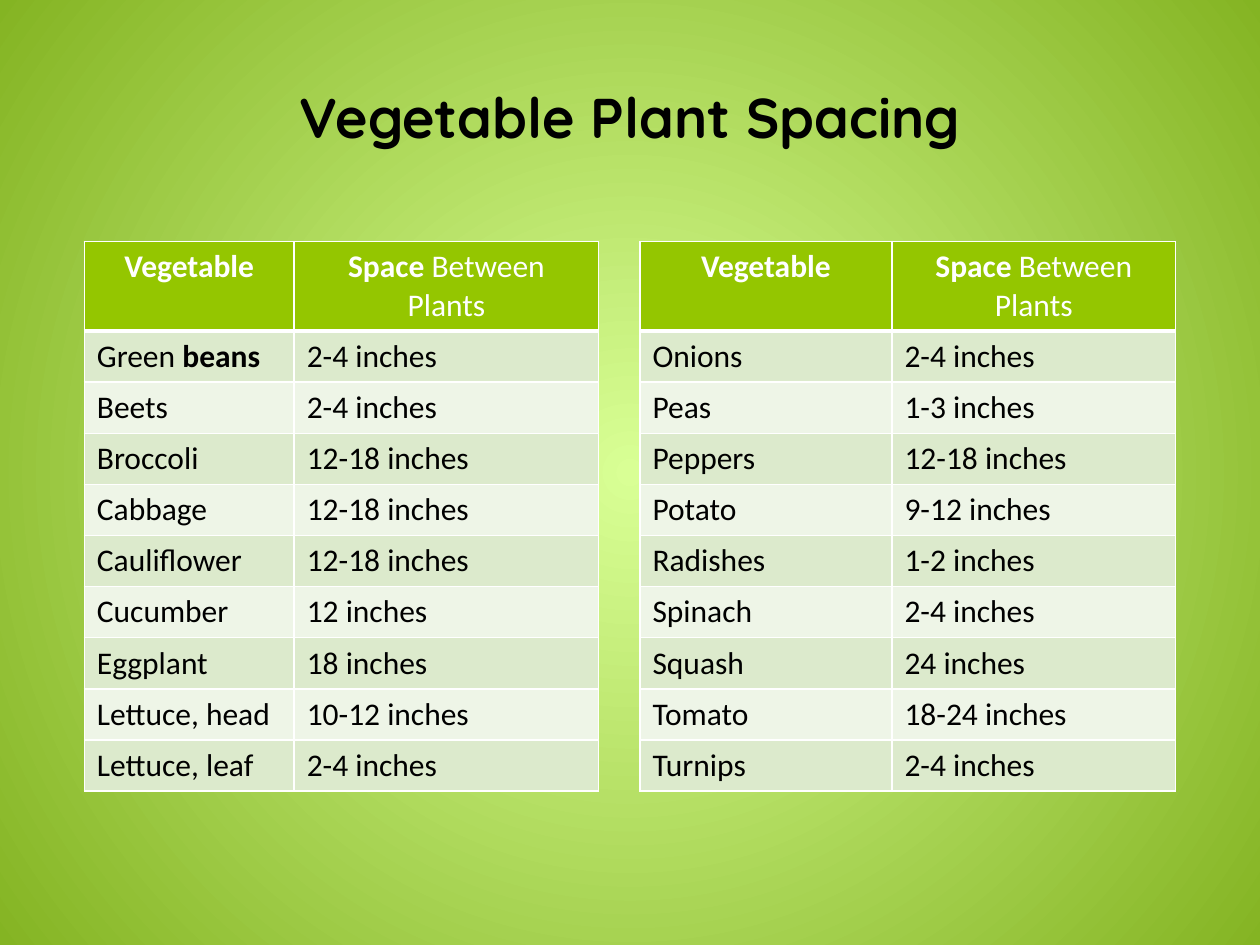
from dataclasses import dataclass

from lxml import etree
from pptx import Presentation, util as u
from pptx.dml.color import RGBColor
from pptx.enum import text
from pptx.oxml.ns import qn


@dataclass(frozen=True)
class Theme:
    head_font: str = "Quicksand"
    body_font: str = "Calibri"
    head_size: int = 32
    body_size: int = 18
    ink: str = "000000"
    white: str = "FFFFFF"
    head: str = "94C600"
    bands: tuple = ("DCEACC", "EEF5E7")
    glow: tuple = ("D9FF95", "84B423")
    thin: int = 1
    thick: int = 3


HEADER = ([("Vegetable", True)], [("Space ", True), ("Between Plants", False)])
LEFT = [
    ([("Green ", False), ("beans", True)], "2-4"),
    ("Beets", "2-4"),
    ("Broccoli", "12-18"),
    ("Cabbage", "12-18"),
    ("Cauliflower", "12-18"),
    ("Cucumber", "12"),
    ("Eggplant", "18"),
    ("Lettuce, head", "10-12"),
    ("Lettuce, leaf", "2-4"),
]
RIGHT = [
    ("Onions", "2-4"),
    ("Peas", "1-3"),
    ("Peppers", "12-18"),
    ("Potato", "9-12"),
    ("Radishes", "1-2"),
    ("Spinach", "2-4"),
    ("Squash", "24"),
    ("Tomato", "18-24"),
    ("Turnips", "2-4"),
]
TOP, HEAD_H, ROW_H = 4.87, 1.78, 1.03


class Deck:
    def __init__(self, theme):
        self.theme = theme
        self.prs = Presentation()
        self.prs.slide_width, self.prs.slide_height = u.Cm(25.4), u.Cm(19.05)
        self.slide = self.prs.slides.add_slide(self.prs.slide_layouts[5])

    def glow(self):
        """Fill the background with a gradient that spreads from the centre."""
        fill = self.slide.background.fill
        fill.gradient()
        for stop, pos, color in zip(fill.gradient_stops, (0, 1), self.theme.glow):
            stop.position = pos
            stop.color.rgb = RGBColor.from_string(color)
        grad = self.slide.element.find(".//" + qn("a:gradFill"))
        grad.remove(grad.find(qn("a:lin")))
        ring = etree.SubElement(grad, qn("a:path"), path="circle")
        etree.SubElement(ring, qn("a:fillToRect"),
                         {side: "50000" for side in "ltrb"})

    def add_runs(self, para, runs, font, size, color):
        for words, bold in runs:
            run = para.add_run()
            run.text = words
            run.font.name, run.font.size = font, u.Pt(size)
            run.font.bold = bold
            run.font.color.rgb = RGBColor.from_string(color)

    def title(self, words):
        t, box = self.theme, self.slide.shapes.title
        box.left, box.top, box.width, box.height = map(
            u.Cm, (1.27, 0.76, 22.86, 3.18))
        frame = box.text_frame
        frame.vertical_anchor = text.MSO_ANCHOR.MIDDLE
        para = frame.paragraphs[0]
        para.alignment = text.PP_ALIGN.CENTER
        self.add_runs(para, [(words, True)], t.head_font, t.head_size, t.ink)

    def edge(self, cell, row):
        """Draw white cell borders, thick where the header meets the body."""
        t, props = self.theme, cell._tc.get_or_add_tcPr()
        wide = {("B", 0), ("T", 1)}
        for side in "LRTB":
            width = t.thick if (side, row) in wide else t.thin
            line = etree.SubElement(props, qn("a:ln" + side), w=str(u.Pt(width)))
            solid = etree.SubElement(line, qn("a:solidFill"))
            etree.SubElement(solid, qn("a:srgbClr"), val=t.white)

    def cell(self, cell, row, runs):
        t, head = self.theme, row == 0
        self.edge(cell, row)
        cell.fill.solid()
        color = t.head if head else t.bands[(row - 1) % 2]
        cell.fill.fore_color.rgb = RGBColor.from_string(color)
        para = cell.text_frame.paragraphs[0]
        para.alignment = text.PP_ALIGN.CENTER if head else text.PP_ALIGN.LEFT
        self.add_runs(para, runs, t.body_font, t.body_size,
                      t.white if head else t.ink)

    def table(self, left, widths, plants):
        rows = [HEADER]
        for name, gap in plants:
            runs = [(name, False)] if isinstance(name, str) else name
            rows.append((runs, [(gap + " inches", False)]))
        high = HEAD_H + ROW_H * len(plants)
        grid = self.slide.shapes.add_table(
            len(rows), len(widths), u.Cm(left), u.Cm(TOP),
            u.Cm(sum(widths)), u.Cm(high)).table
        for col, width in zip(grid.columns, widths):
            col.width = u.Cm(width)
        for i, row in enumerate(rows):
            grid.rows[i].height = u.Cm(ROW_H if i else HEAD_H)
            for j, runs in enumerate(row):
                self.cell(grid.cell(i, j), i, runs)


def main():
    deck = Deck(Theme())
    deck.glow()
    deck.title("Vegetable Plant Spacing")
    deck.table(1.7, (4.23, 6.14), LEFT)
    deck.table(12.9, (5.08, 5.72), RIGHT)
    deck.prs.save("out.pptx")


if __name__ == "__main__":
    main()
